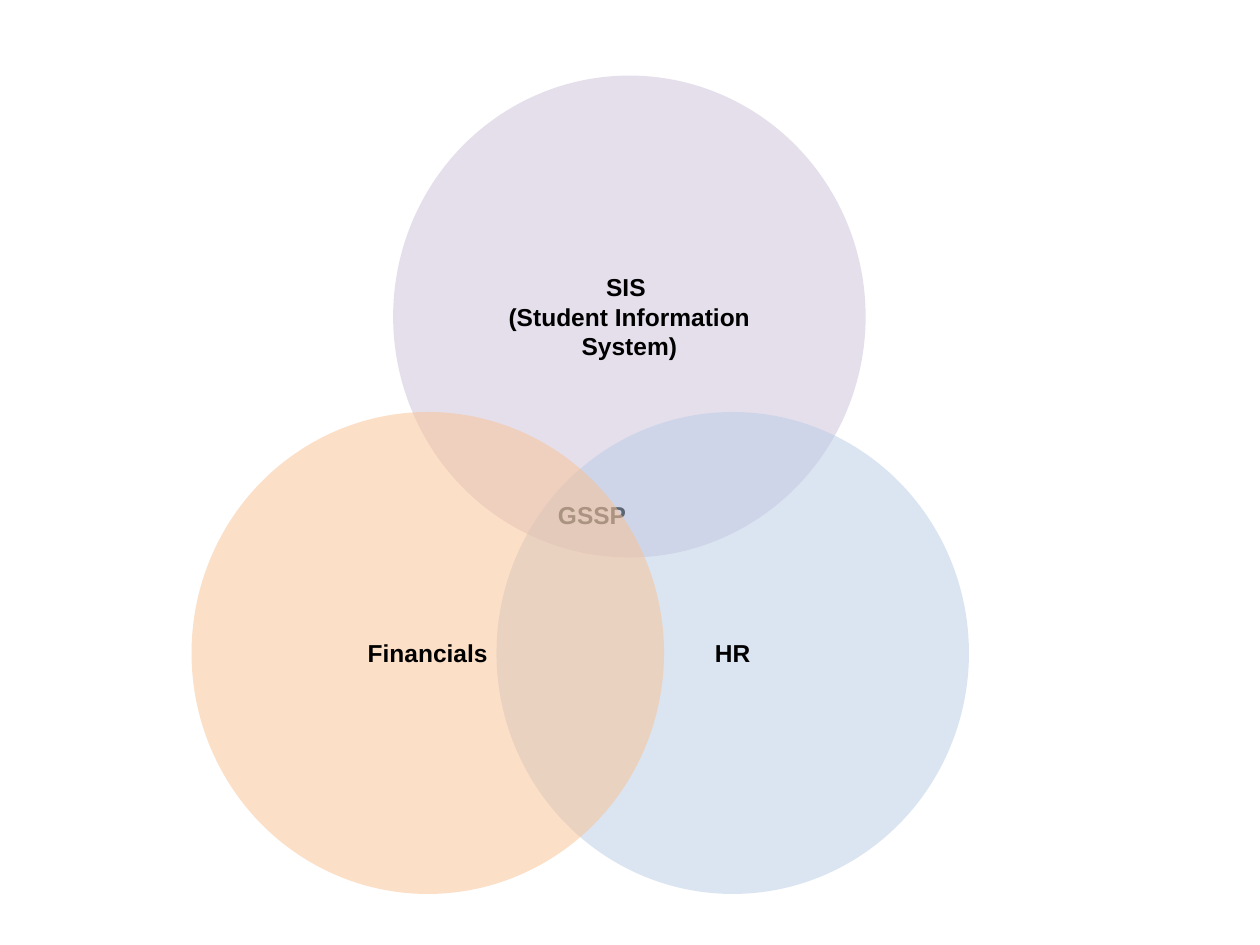
import lxml.etree
import pptx
import pptx.dml.color
import pptx.enum.shapes
import pptx.enum.text
import pptx.oxml.ns
import pptx.util


def color(hex_value):
    return pptx.dml.color.RGBColor.from_string(hex_value)


class VennSlide:
    label_format = {"name": "Arial", "size": pptx.util.Pt(14), "bold": True}
    label_color = "000000"
    circle_size = (0.375, 0.51)
    opacity = 50

    def __init__(self, deck):
        self.width, self.height = deck.slide_width, deck.slide_height
        self.slide = deck.slides.add_slide(deck.slide_layouts[6])

    def place(self, left, top, width, height):
        return (round(left * self.width), round(top * self.height),
                round(width * self.width), round(height * self.height))

    def add_lines(self, frame, lines, alignment):
        for index, line in enumerate(lines):
            paragraph = frame.add_paragraph() if index else frame.paragraphs[0]
            paragraph.alignment = alignment
            run = paragraph.add_run()
            run.text = line
            for attribute, value in self.label_format.items():
                setattr(run.font, attribute, value)
            run.font.color.rgb = color(self.label_color)

    def circle(self, left, top, fill, lines):
        system = self.slide.shapes.add_shape(
            pptx.enum.shapes.MSO_SHAPE.FLOWCHART_CONNECTOR,
            *self.place(left, top, *self.circle_size))
        system.shadow.inherit = False
        system.line.fill.background()
        system.fill.solid()
        system.fill.fore_color.rgb = color(fill)
        tint = system.element.spPr.find(".//" + pptx.oxml.ns.qn("a:srgbClr"))
        lxml.etree.SubElement(tint, pptx.oxml.ns.qn("a:alpha"),
                              val=str(self.opacity * 1000))
        system.text_frame.word_wrap = True
        system.text_frame.vertical_anchor = pptx.enum.text.MSO_ANCHOR.MIDDLE
        self.add_lines(system.text_frame, lines, pptx.enum.text.PP_ALIGN.CENTER)

    def label(self, left, top, width, height, text):
        frame = self.slide.shapes.add_textbox(
            *self.place(left, top, width, height)).text_frame
        frame.word_wrap = False
        frame.auto_size = pptx.enum.text.MSO_AUTO_SIZE.SHAPE_TO_FIT_TEXT
        self.add_lines(frame, [text], pptx.enum.text.PP_ALIGN.LEFT)


def main():
    deck = pptx.Presentation()
    deck.slide_width = pptx.util.Inches(10)
    deck.slide_height = pptx.util.Inches(7.5)
    venn = VennSlide(deck)
    lower_row = 0.436
    venn.circle(0.312, 0.08, "CCC1DA", ["SIS ", "(Student Information System)"])
    venn.label(0.433, 0.523, 0.09, 0.053, "GSSP")
    venn.circle(0.394, lower_row, "B9CDE5", ["HR"])
    venn.circle(0.152, lower_row, "FAC090", ["Financials"])
    deck.save("out.pptx")


if __name__ == "__main__":
    main()
